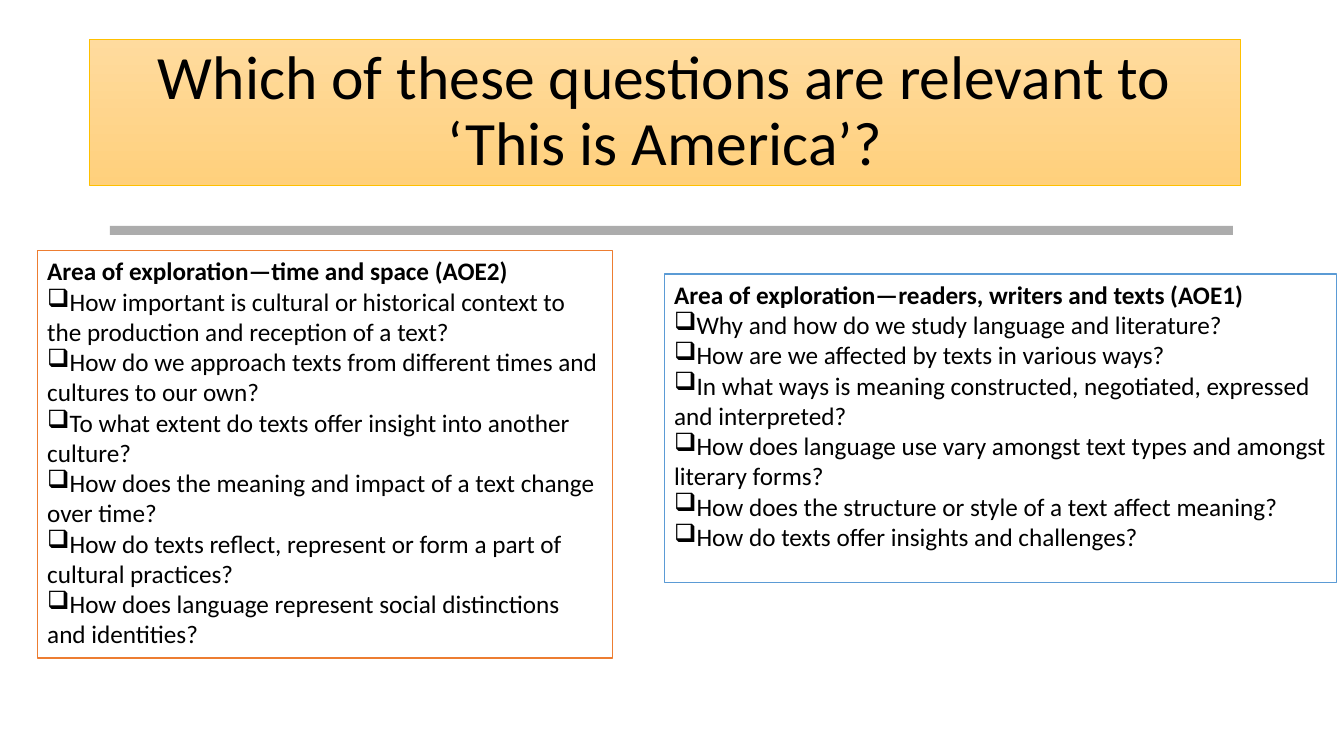
"""Build a slide that sorts exploration questions for a text."""
from lxml import etree
from pptx import Presentation
from pptx.dml.color import RGBColor
from pptx.enum.shapes import MSO_SHAPE
from pptx.enum.text import MSO_ANCHOR, MSO_AUTO_SIZE, PP_ALIGN
from pptx.oxml.ns import qn
from pptx.util import Cm, Pt

RECTANGLE = MSO_SHAPE.RECTANGLE
TOP, MIDDLE = MSO_ANCHOR.TOP, MSO_ANCHOR.MIDDLE
NO_RESIZE = MSO_AUTO_SIZE.NONE
LEFT, CENTER, JUSTIFY = PP_ALIGN.LEFT, PP_ALIGN.CENTER, PP_ALIGN.JUSTIFY

COLORS = {
    "text": "000000", "paper": "FFFFFF", "divider": "808080",
    "title_top": "FFDB9E", "title_bottom": "FFD07C", "title_edge": "FFC000",
    "orange": "ED7D31", "blue": "5B9BD5",
}
TITLE = "Which of these questions are relevant to ‘This is America’?"
TITLE_AREA = (2.24, 0.99, 29.03, 3.68)
DIVIDER_AREA = (2.77, 5.69, 28.3, 0.23)
DIVIDER_ALPHA = 65000
AREAS = [
    {
        "heading": "Area of exploration—time and space (AOE2)",
        "area": (0.94, 6.32, 14.5, 10.26),
        "edge": "orange",
        "questions": [
            "How important is cultural or historical context to the production and reception of a text?",
            "How do we approach texts from different times and cultures to our own?",
            "To what extent do texts offer insight into another culture?",
            "How does the meaning and impact of a text change over time?",
            "How do texts reflect, represent or form a part of cultural practices?",
            "How does language represent social distinctions and identities?",
        ],
    },
    {
        "heading": "Area of exploration—readers, writers and texts (AOE1)",
        "area": (16.74, 6.91, 16.94, 7.77),
        "edge": "blue",
        "questions": [
            "Why and how do we study language and literature?",
            "How are we affected by texts in various ways?",
            "In what ways is meaning constructed, negotiated, expressed and interpreted?",
            "How does language use vary amongst text types and amongst literary forms?",
            "How does the structure or style of a text affect meaning?",
            "How do texts offer insights and challenges?",
        ],
    },
]
TITLE_FORMAT = {"name": "Calibri", "size": Pt(44), "bold": False}
HEADING_FORMAT = {"name": "Calibri", "size": Pt(18), "bold": True}
QUESTION_FORMAT = {**HEADING_FORMAT, "bold": False}


def color(key):
    return RGBColor.from_string(COLORS[key])


def set_attributes(target, values):
    for name, value in values.items():
        setattr(target, name, value)


def add_box(slide, area, fill):
    box = slide.shapes.add_shape(RECTANGLE, *map(Cm, area))
    box.shadow.inherit = False
    box.fill.solid()
    box.fill.fore_color.rgb = color(fill)
    return box


def set_edge(box, key, width):
    box.line.color.rgb = color(key)
    box.line.width = Pt(width)


def write(paragraph, text, font_format, alignment, bullet=None):
    paragraph.text = text
    paragraph.alignment = alignment
    if bullet:
        properties = paragraph._p.get_or_add_pPr()
        properties.set("marL", "0")
        properties.set("indent", "0")
        etree.SubElement(properties, qn("a:buChar"), char=bullet)
    font = paragraph.runs[0].font
    set_attributes(font, font_format)
    font.color.rgb = color("text")


def add_title(slide):
    title = slide.shapes.title
    set_attributes(title, dict(zip(("left", "top", "width", "height"), map(Cm, TITLE_AREA))))
    title.fill.gradient()
    title.fill.gradient_angle = 270
    for stop, key in zip(title.fill.gradient_stops, ("title_top", "title_bottom")):
        stop.color.rgb = color(key)
    set_edge(title, "title_edge", 0.5)
    frame = title.text_frame
    set_attributes(frame, {"word_wrap": True, "auto_size": NO_RESIZE, "vertical_anchor": MIDDLE})
    write(frame.paragraphs[0], TITLE, TITLE_FORMAT, CENTER)
    frame.paragraphs[0].line_spacing = 0.9


def add_divider(slide):
    divider = add_box(slide, DIVIDER_AREA, "divider")
    divider.line.fill.background()
    gray = divider.fill._xPr.find(".//" + qn("a:srgbClr"))
    etree.SubElement(gray, qn("a:alpha"), val=str(DIVIDER_ALPHA))


def add_area(slide, heading, area, edge, questions):
    box = add_box(slide, area, "paper")
    set_edge(box, edge, 1)
    frame = box.text_frame
    set_attributes(frame, {"word_wrap": True, "auto_size": NO_RESIZE, "vertical_anchor": TOP})
    write(frame.paragraphs[0], heading, HEADING_FORMAT, JUSTIFY)
    for question in questions:
        write(frame.add_paragraph(), question, QUESTION_FORMAT, LEFT, "❑")


def main():
    deck = Presentation()
    deck.slide_width, deck.slide_height = Cm(33.87), Cm(19.05)
    slide = deck.slides.add_slide(deck.slide_layouts[5])
    add_title(slide)
    add_divider(slide)
    for content in AREAS:
        add_area(slide, **content)
    deck.save("out.pptx")


if __name__ == "__main__":
    main()
